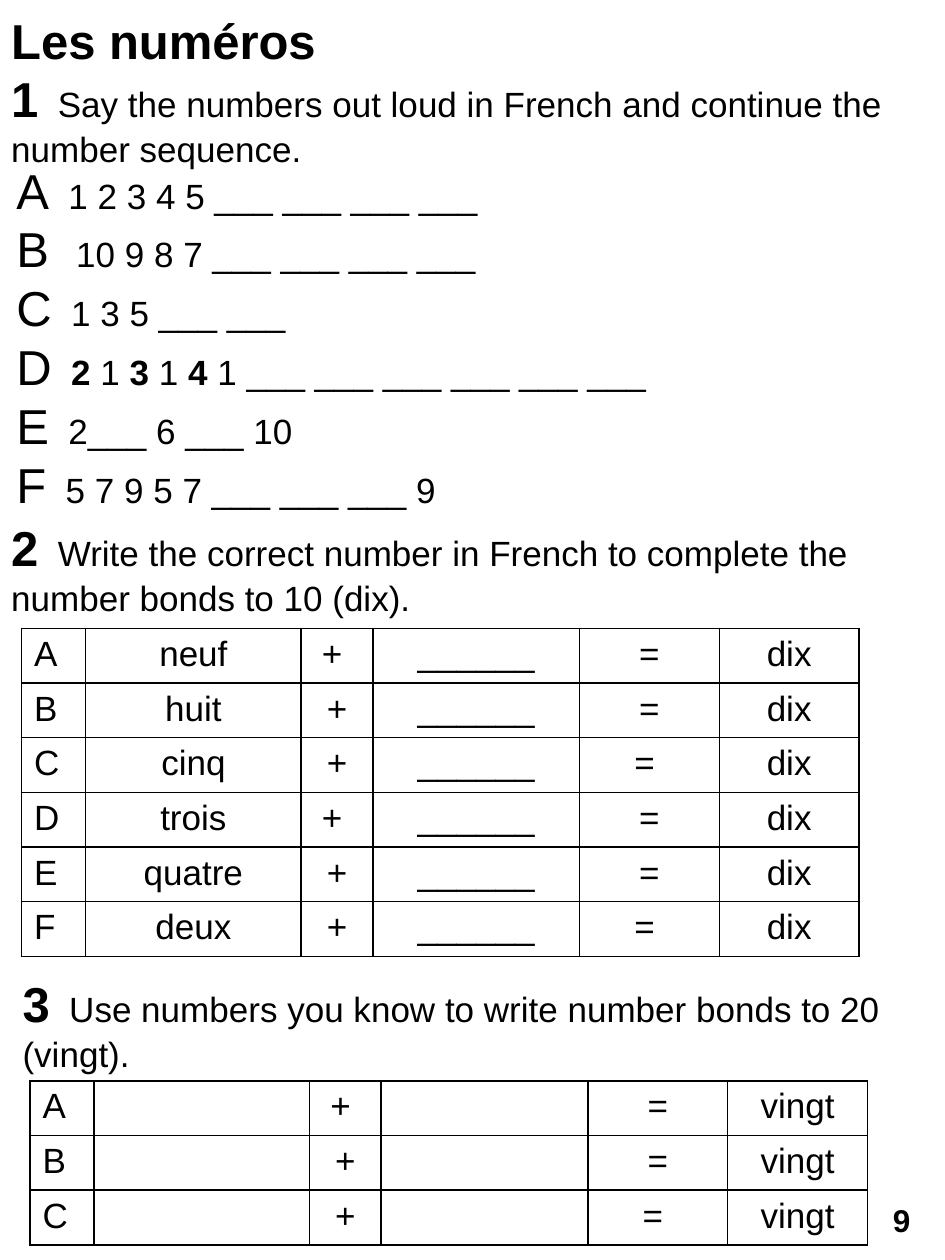
"""Build a French numbers worksheet page with sequences and number bonds."""
from lxml import etree
from pptx import Presentation
from pptx.dml.color import RGBColor
from pptx.enum.shapes import MSO_SHAPE
from pptx.enum.text import MSO_ANCHOR, PP_ALIGN
from pptx.oxml.ns import qn
from pptx.util import Pt

BLACK = RGBColor(0, 0, 0)
FONT = "Arial"
LARGE, BODY, PAGE_SIZE = 28, 20, 18
CENTER, LEFT = PP_ALIGN.CENTER, PP_ALIGN.LEFT
MIDDLE = MSO_ANCHOR.MIDDLE
ROUNDED = MSO_SHAPE.ROUNDED_RECTANGLE
COLUMN_WIDTHS = [36.7, 123.1, 41, 118.1, 79.9, 79.9]
ROW_HEIGHT = 31.2


def add_text(paragraph, text, size, bold=False):
    run = paragraph.add_run()
    run.text = text
    run.font.name = FONT
    run.font.size = Pt(size)
    run.font.bold = bold
    run.font.color.rgb = BLACK


def add_box(left, top, width, height):
    box = slide.shapes.add_textbox(Pt(left), Pt(top), Pt(width), Pt(height))
    box.text_frame.word_wrap = True
    return box.text_frame


presentation = Presentation()
presentation.slide_width = Pt(540)
presentation.slide_height = Pt(720)
slide = presentation.slides.add_slide(presentation.slide_layouts[6])

exercises = [
    (-0.7, 2.2, 99.4, "Les numéros", "1",
     "Say the numbers out loud in French and continue the number sequence."),
    (-0.7, 292.3, 65.5, None, "2",
     "Write the correct number in French to complete the number bonds to 10 (dix)."),
    (5.8, 553, 65.5, None, "3",
     "Use numbers you know to write number bonds to 20 (vingt)."),
]
for left, top, height, title, number, instruction in exercises:
    paragraph = add_box(left, top, 534.2, height).paragraphs[0]
    if title:
        add_text(paragraph, title, LARGE, True)
        paragraph.add_line_break()
    add_text(paragraph, number, LARGE, True)
    add_text(paragraph, "  " + instruction, BODY)

sequences = [
    ("A", ["  1 2 3 4 5 ___ ___ ___ ___"]),
    ("B  ", ["10 9 8 7 ___ ___ ___ ___"]),
    ("C", ["  1 3 5 ___ ___"]),
    ("D", ["  ", "2", " 1 ", "3", " 1 ", "4", " 1 ___ ___ ___ ___ ___ ___"]),
    ("E", ["  2___ 6 ___ 10"]),
    ("F", ["  5 7 9 5 7 ___ ___ ___ 9"]),
]
sequence_frame = add_box(2.3, 88, 493.2, 211)
for index, (letter, parts) in enumerate(sequences):
    paragraph = sequence_frame.add_paragraph() if index else sequence_frame.paragraphs[0]
    add_text(paragraph, letter, LARGE)
    for position, part in enumerate(parts):
        add_text(paragraph, part, BODY, position % 2 == 1)

bond_tables = [
    (12.3, 359.1, ["neuf", "huit", "cinq", "trois", "quatre", "deux"], "______", "dix"),
    (17.1, 617.6, ["", "", ""], "", "vingt"),
]
plus_signs = ["+ ", "+", "+", "+ ", "+", "+"]
equals_signs = ["=", "=", "= ", "=", "=", "= "]
for left, top, first_numbers, gap, total in bond_tables:
    table = slide.shapes.add_table(
        len(first_numbers), len(COLUMN_WIDTHS), Pt(left), Pt(top),
        Pt(sum(COLUMN_WIDTHS)), Pt(ROW_HEIGHT * len(first_numbers))).table
    table.first_row = False
    table.horz_banding = False
    for column, width in zip(table.columns, COLUMN_WIDTHS):
        column.width = Pt(width)
    rows = zip(table.rows, "ABCDEF", first_numbers, plus_signs, equals_signs)
    for row, letter, first_number, plus, equals in rows:
        row.height = Pt(ROW_HEIGHT)
        texts = [letter, first_number, plus, gap, equals, total]
        for index, (cell, text) in enumerate(zip(row.cells, texts)):
            paragraph = cell.text_frame.paragraphs[0]
            paragraph.alignment = CENTER if index else LEFT
            if text:
                add_text(paragraph, text, BODY)
            properties = cell._tc.get_or_add_tcPr()
            for side in ("a:lnL", "a:lnR", "a:lnT", "a:lnB"):
                border = etree.SubElement(properties, qn(side), w=str(Pt(1)))
                line_fill = etree.SubElement(border, qn("a:solidFill"))
                etree.SubElement(line_fill, qn("a:srgbClr"), val=str(BLACK))
            cell.fill.background()

page_number = slide.shapes.add_shape(ROUNDED, Pt(495.4), Pt(680.4), Pt(39.6), Pt(33.8))
page_number.shadow.inherit = False
page_number.fill.background()
page_number.line.fill.background()
page_number.text_frame.vertical_anchor = MIDDLE
paragraph = page_number.text_frame.paragraphs[0]
paragraph.alignment = CENTER
add_text(paragraph, "9", PAGE_SIZE, True)

presentation.save("out.pptx")
